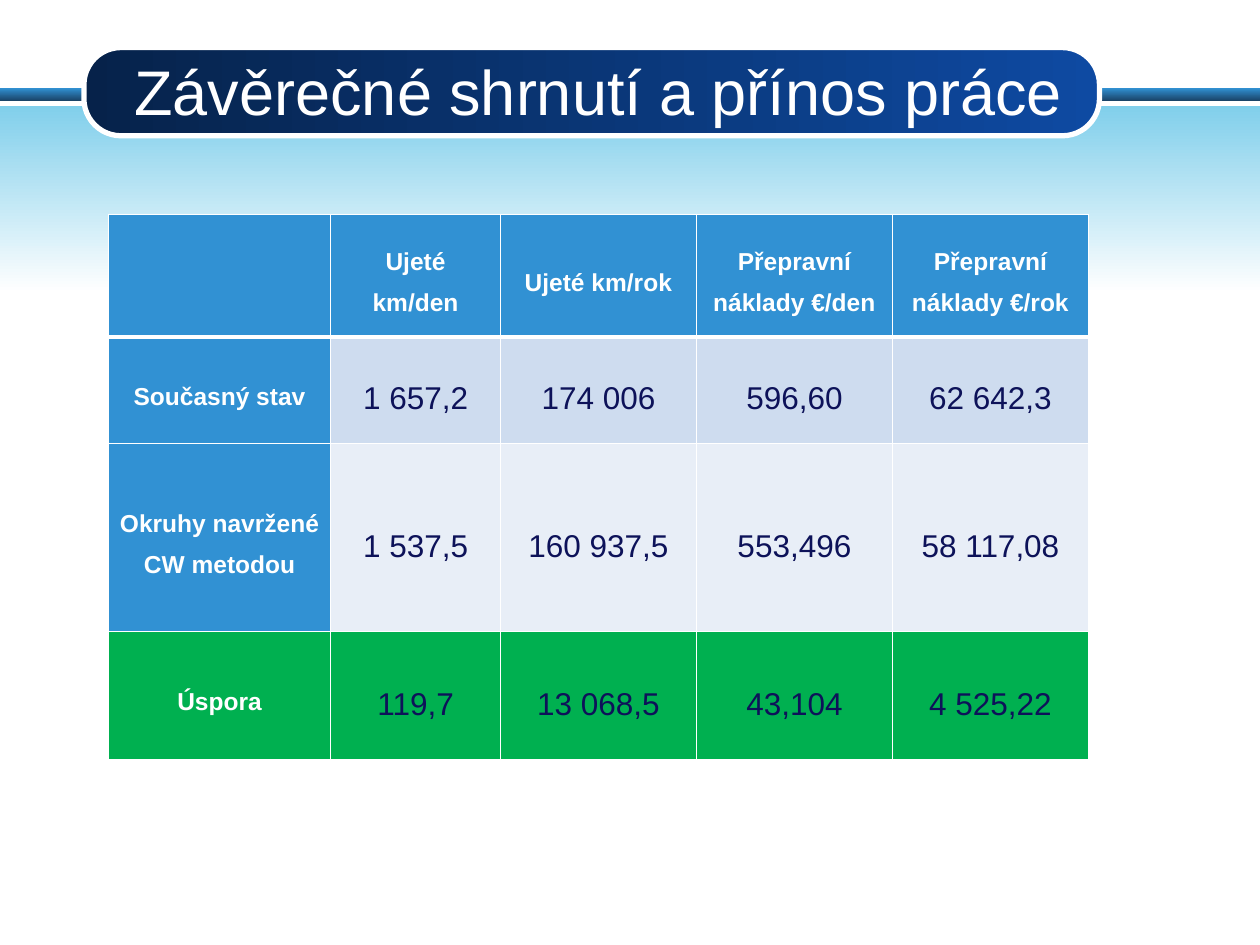
from lxml.etree import SubElement
from pptx import Presentation
from pptx.dml.color import RGBColor
from pptx.enum.shapes import MSO_SHAPE
from pptx.enum.text import MSO_ANCHOR, MSO_AUTO_SIZE, PP_ALIGN
from pptx.oxml.ns import qn
from pptx.util import Pt

FONT = "Arial"
COLORS = {
    "white": "FFFFFF", "blue": "3191D3", "steel": "1A4468", "sky": "81CFEB",
    "navy": "06224A", "royal": "0E4AA2", "ink": "0D1259",
    "light": "CEDCEF", "pale": "E8EEF7", "green": "00B050",
}
TITLE = "Závěrečné shrnutí a přínos práce"
ROWS = [
    ["", "Ujeté km/den", "Ujeté km/rok", "Přepravní náklady €/den", "Přepravní náklady €/rok"],
    ["Současný stav", "1 657,2", "174 006", "596,60", "62 642,3"],
    ["Okruhy navržené CW metodou", "1 537,5", "160 937,5", "553,496", "58 117,08"],
    ["Úspora", "119,7", "13 068,5", "43,104", "4 525,22"],
]
# Fill of the label cell and of the value cells in each row
ROW_FILLS = [("blue", "blue"), ("blue", "light"), ("blue", "pale"), ("green", "green")]
COL_WIDTHS = [127, 97, 112, 112, 112]
ROW_HEIGHTS = [70, 61, 107.5, 73]
TABLE_LEFT, TABLE_TOP = 62, 122.5


def rgb(name):
    return RGBColor.from_string(COLORS[name])


def add_gradient_shape(slide, kind, box, start, end, angle):
    sp = slide.shapes.add_shape(kind, *map(Pt, box))
    sp.shadow.inherit = False
    sp.fill.gradient()
    sp.fill.gradient_angle = angle
    for stop, name in zip(sp.fill.gradient_stops, (start, end)):
        stop.color.rgb = rgb(name)
    sp.line.fill.background()
    return sp


def set_borders(cell, widths):
    """Draw white cell borders; widths maps a side (L, R, T, B) to points."""
    tcPr = cell._tc.get_or_add_tcPr()
    for side, width in widths.items():
        ln = SubElement(tcPr, qn(f"a:ln{side}"), w=str(Pt(width)))
        fill = SubElement(ln, qn("a:solidFill"))
        SubElement(fill, qn("a:srgbClr"), val=COLORS["white"])


def format_text(cell, is_label):
    cell.vertical_anchor = MSO_ANCHOR.MIDDLE
    cell.margin_left = cell.margin_right = Pt(5)
    cell.margin_top = cell.margin_bottom = 0
    p = cell.text_frame.paragraphs[0]
    p.alignment = PP_ALIGN.CENTER
    p.line_spacing = 1.5
    p.space_after = Pt(10)
    for r in p.runs:
        r.font.name = FONT
        r.font.size = Pt(14 if is_label else 18)
        r.font.bold = is_label
        r.font.color.rgb = rgb("white" if is_label else "ink")


def add_background(slide):
    add_gradient_shape(slide, MSO_SHAPE.RECTANGLE, (0, 50.4, 720, 7.2), "blue", "steel", 270)
    add_gradient_shape(slide, MSO_SHAPE.RECTANGLE, (0, 60.5, 720, 107), "sky", "white", 270)
    pill = add_gradient_shape(slide, MSO_SHAPE.ROUNDED_RECTANGLE,
                              (48, 27.2, 580.3, 50.4), "navy", "royal", 0)
    pill.adjustments[0] = 0.42
    pill.line.color.rgb = rgb("white")
    pill.line.width = Pt(3)


def add_title(slide):
    title = slide.shapes.title
    slide.shapes._spTree.append(title._element)  # in front of the pill
    title.left, title.top, title.width, title.height = map(Pt, (66, 29.5, 552, 44.6))
    tf = title.text_frame
    tf.text = TITLE
    tf.word_wrap = True
    tf.auto_size = MSO_AUTO_SIZE.NONE
    tf.vertical_anchor = MSO_ANCHOR.MIDDLE
    p = tf.paragraphs[0]
    p.alignment = PP_ALIGN.CENTER
    r = p.runs[0]
    r.font.name = FONT
    r.font.size = Pt(36)
    r.font.color.rgb = rgb("white")


def add_summary_table(slide):
    frame = slide.shapes.add_table(len(ROWS), len(COL_WIDTHS), Pt(TABLE_LEFT), Pt(TABLE_TOP),
                                   Pt(sum(COL_WIDTHS)), Pt(sum(ROW_HEIGHTS)))
    table = frame.table
    table.horz_banding = False
    table.first_col = True
    for column, width in zip(table.columns, COL_WIDTHS):
        column.width = Pt(width)
    for i, (texts, fills) in enumerate(zip(ROWS, ROW_FILLS)):
        table.rows[i].height = Pt(ROW_HEIGHTS[i])
        for j, text in enumerate(texts):
            cell = table.cell(i, j)
            cell.text = text
            format_text(cell, is_label=i == 0 or j == 0)
            set_borders(cell, {"L": 1, "R": 1, "T": 3 if i == 1 else 1, "B": 3 if i == 0 else 1})
            cell.fill.solid()
            cell.fill.fore_color.rgb = rgb(fills[min(j, 1)])


def main():
    prs = Presentation()
    prs.slide_width, prs.slide_height = Pt(720), Pt(540)
    slide = prs.slides.add_slide(prs.slide_layouts[5])
    add_background(slide)
    add_title(slide)
    add_summary_table(slide)
    prs.save("out.pptx")


if __name__ == "__main__":
    main()
